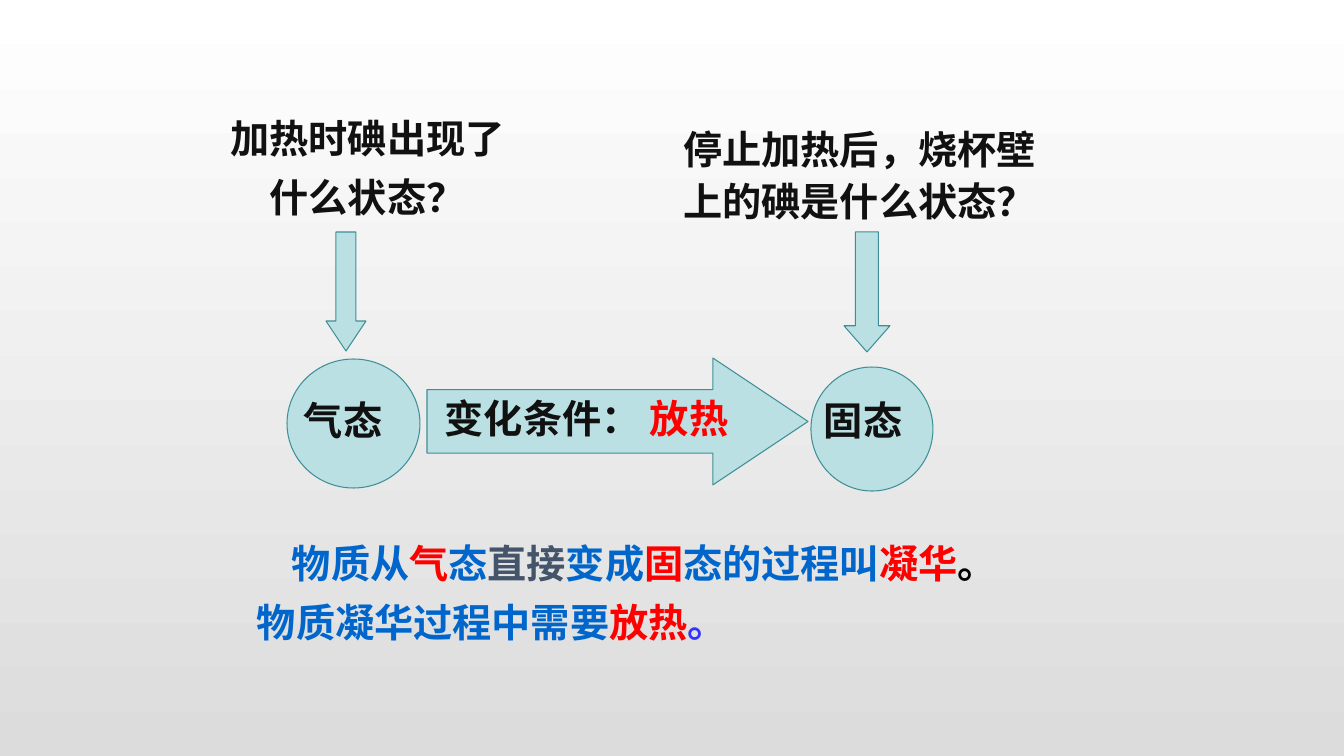
from lxml.etree import SubElement
from pptx import Presentation
from pptx.dml.color import RGBColor
from pptx.enum.shapes import MSO_SHAPE as SHAPE
from pptx.enum.text import MSO_AUTO_SIZE as AUTO_SIZE, PP_ALIGN as ALIGN
from pptx.oxml.ns import qn
from pptx.util import Pt

PX = 914400 / 100.8
FONT = "Noto Sans CJK SC"
INK, RED, BLUE, SLATE = "111111", "FF0000", "0066CC", "44546A"
BLACK, VIOLET = "000000", "3333FF"
FILL, OUTLINE = "BBE0E3", "3D8F95"
RUN_FORMAT = {"name": FONT, "size": Pt(28), "bold": True}


def px(n):
    return round(n * PX)


def rgb(value):
    return RGBColor.from_string(value)


def add_background(s, top, bottom):
    fill = s.background.fill
    fill.gradient()
    fill.gradient_angle = 270
    for stop, color in zip(fill.gradient_stops, (top, bottom)):
        stop.color.rgb = rgb(color)


def add_figure(s, kind, box, adjustments=()):
    sp = s.shapes.add_shape(kind, *map(px, box))
    sp.shadow.inherit = False
    sp.fill.solid()
    sp.fill.fore_color.rgb = rgb(FILL)
    sp.line.color.rgb = rgb(OUTLINE)
    sp.line.width = Pt(0.75)
    for i, value in enumerate(adjustments):
        sp.adjustments[i] = value


def add_run(p, text, color):
    r = p.add_run()
    r.text = text
    for name, value in RUN_FORMAT.items():
        setattr(r.font, name, value)
    r.font.color.rgb = rgb(color)
    SubElement(r.font._element, qn("a:ea"), typeface=FONT)


def add_text(s, box, paragraphs, **paragraph_format):
    """Each paragraph is a list of (text, colour) runs; None is a line break."""
    tf = s.shapes.add_textbox(*map(px, box)).text_frame
    tf.word_wrap = True
    tf.auto_size = AUTO_SIZE.SHAPE_TO_FIT_TEXT
    for i, runs in enumerate(paragraphs):
        p = tf.add_paragraph() if i else tf.paragraphs[0]
        for name, value in paragraph_format.items():
            setattr(p, name, value)
        for run in runs:
            if run is None:
                p.add_line_break()
            else:
                add_run(p, *run)
    return tf


def add_conclusion(s):
    runs = [
        ("物质从", BLUE), ("气", RED), ("态", BLUE), ("直接", SLATE),
        ("变成", BLUE), ("固", RED), ("态的过程叫", BLUE), ("凝华", RED),
        ("。", BLACK), None,
        ("物质凝华过程中需要", BLUE), ("放热", RED), ("。", VIOLET),
    ]
    tf = add_text(s, (247, 523, 787, 129), [runs], line_spacing=1.25)
    tf.paragraphs[0]._p.get_or_add_pPr().set("indent", str(px(35)))


def main():
    prs = Presentation()
    prs.slide_width, prs.slide_height = px(1344), px(756)
    s = prs.slides.add_slide(prs.slide_layouts[6])
    add_background(s, "FFFFFF", "DCDCDC")
    add_conclusion(s)

    add_figure(s, SHAPE.OVAL, (811, 367, 122, 124))
    add_text(s, (814, 391, 116, 57), [[("固态", INK)]])
    add_figure(s, SHAPE.DOWN_ARROW, (844, 232, 46, 120), (0.5, 0.57))
    add_text(s, (667, 116, 385, 115),
             [[("停止加热后，烧杯壁上的碘是什么状态？", INK)]],
             alignment=ALIGN.CENTER, line_spacing=1.1)

    add_figure(s, SHAPE.OVAL, (287, 359, 133, 129))
    add_text(s, (175, 98, 385, 121),
             [[("加热时碘出现了", INK)], [("什么状态？", INK)]],
             alignment=ALIGN.CENTER, line_spacing=1.25)
    add_figure(s, SHAPE.DOWN_ARROW, (326, 232, 40, 119), (0.5, 0.75))
    add_text(s, (294, 391, 119, 57), [[("气态", INK)]])

    add_figure(s, SHAPE.RIGHT_ARROW, (427, 358, 381, 127), (0.5, 0.75))
    add_text(s, (640, 389, 116, 57), [[("放热", RED)]])
    add_text(s, (435, 389, 249, 57), [[("变化条件：", INK)]])
    prs.save("out.pptx")


if __name__ == "__main__":
    main()
